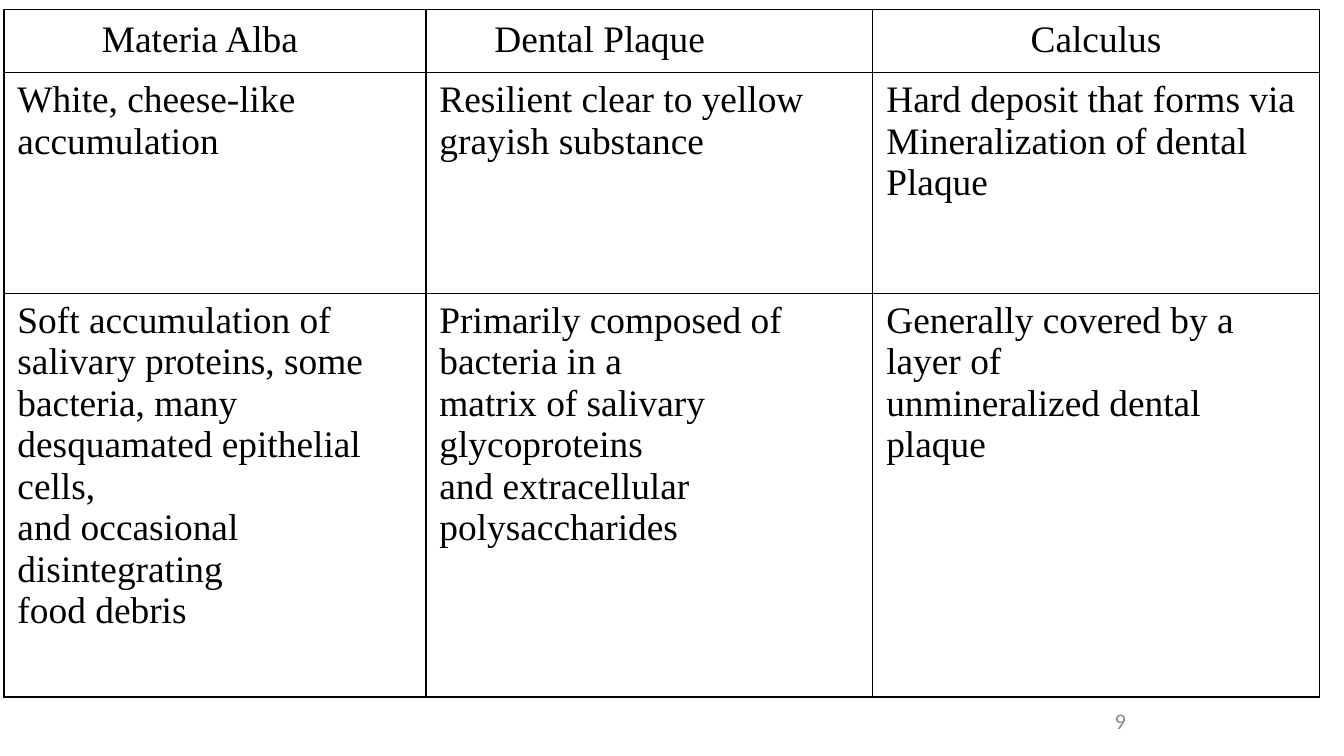
from lxml import etree
from pptx import Presentation
from pptx import util as u
from pptx.dml import color as dml
from pptx.enum import text
from pptx.oxml import ns

SLIDE_WIDTH = u.Inches(10)
SLIDE_HEIGHT = SLIDE_WIDTH * 9 // 16
COLUMN = SLIDE_WIDTH / 100
ROW = SLIDE_HEIGHT / 100
SERIF = "Times New Roman"
BLACK = "000000"
GRAY = "8C8C8C"

HEADINGS = ["Materia Alba", "Dental Plaque", "Calculus"]
HEADING_STOPS = [5.6, 34.8, 74.7]
COLUMN_WIDTHS = [31.4, 33.25, 33.25]
ROW_HEIGHTS = [8.36, 29.2, 53.4]
DESCRIPTIONS = [
    [
        ["White, cheese-like accumulation"],
        ["Resilient clear to yellow grayish substance"],
        ["Hard deposit that forms via", "Mineralization of dental Plaque"],
    ],
    [
        [
            "Soft accumulation of salivary proteins, some bacteria, many",
            "desquamated epithelial cells,",
            "and occasional disintegrating",
            "food debris",
        ],
        [
            "Primarily composed of bacteria in a",
            "matrix of salivary glycoproteins",
            "and extracellular polysaccharides",
        ],
        ["Generally covered by a layer of", "unmineralized dental plaque"],
    ],
]


def rgb(value):
    return dml.RGBColor.from_string(value)


def to_emu(box):
    left, top, width, height = box
    return int(left * COLUMN), int(top * ROW), int(width * COLUMN), int(height * ROW)


def set_font(paragraph, name, size, color):
    paragraph.font.name = name
    paragraph.font.size = u.Pt(size)
    paragraph.font.color.rgb = rgb(color)


def add_borders(cell, color, width):
    properties = cell._tc.get_or_add_tcPr()
    for index, side in enumerate(("lnL", "lnR", "lnT", "lnB")):
        line = etree.Element(ns.qn(f"a:{side}"), w=str(u.Pt(width)))
        fill = etree.SubElement(line, ns.qn("a:solidFill"))
        etree.SubElement(fill, ns.qn("a:srgbClr"), val=color)
        properties.insert(index, line)


def add_comparison_table(slide, box):
    frame = slide.shapes.add_table(len(ROW_HEIGHTS), len(COLUMN_WIDTHS), *to_emu(box))
    table = frame.table
    table.first_row = False
    table.horz_banding = False
    for column, width in zip(table.columns, COLUMN_WIDTHS):
        column.width = int(width * COLUMN)
    for row, height in zip(table.rows, ROW_HEIGHTS):
        row.height = int(height * ROW)
    for cell in table.iter_cells():
        cell.fill.background()
        add_borders(cell, BLACK, 0.75)
    for row_index, descriptions in enumerate(DESCRIPTIONS, start=1):
        for column_index, lines in enumerate(descriptions):
            cell = table.cell(row_index, column_index)
            cell.text = "\n".join(lines)
            for paragraph in cell.text_frame.paragraphs:
                set_font(paragraph, SERIF, 20, BLACK)


def add_headings(slide, box):
    frame = slide.shapes.add_textbox(*to_emu(box)).text_frame
    frame.word_wrap = True
    paragraph = frame.paragraphs[0]
    paragraph.text = "".join(f"\t{heading}" for heading in HEADINGS)
    tabs = etree.SubElement(paragraph._p.get_or_add_pPr(), ns.qn("a:tabLst"))
    for stop in HEADING_STOPS:
        etree.SubElement(tabs, ns.qn("a:tab"), pos=str(int(stop * COLUMN)), algn="l")
    set_font(paragraph, SERIF, 20, BLACK)


def add_page_number(slide, box, number):
    frame = slide.shapes.add_textbox(*to_emu(box)).text_frame
    frame.word_wrap = True
    frame.vertical_anchor = text.MSO_ANCHOR.MIDDLE
    paragraph = frame.paragraphs[0]
    paragraph.text = str(number)
    paragraph.alignment = text.PP_ALIGN.CENTER
    set_font(paragraph, "Calibri", 12, GRAY)


def main():
    presentation = Presentation()
    presentation.slide_width = SLIDE_WIDTH
    presentation.slide_height = SLIDE_HEIGHT
    slide = presentation.slides.add_slide(presentation.slide_layouts[6])
    add_page_number(slide, (71.7, 92.7, 23.3, 5.34), 9)
    add_comparison_table(slide, (0.3, 1.25, sum(COLUMN_WIDTHS), sum(ROW_HEIGHTS)))
    add_headings(slide, (1, 1.15, 91.5, 7.83))
    presentation.save("out.pptx")


if __name__ == "__main__":
    main()
